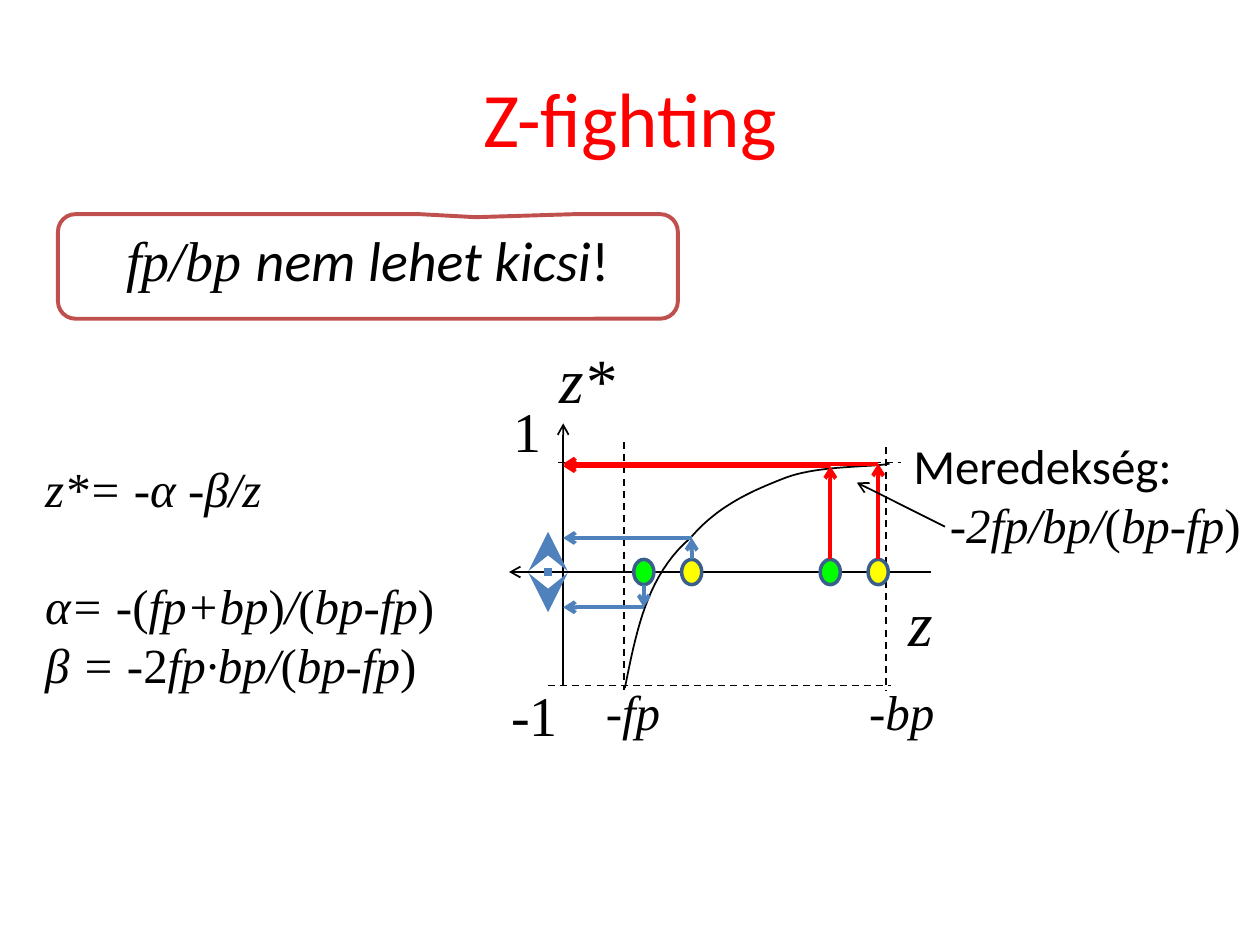
from dataclasses import dataclass

from lxml.etree import SubElement
from pptx import Presentation
from pptx.dml.color import RGBColor
from pptx.enum.dml import MSO_LINE
from pptx.enum.shapes import MSO_CONNECTOR, MSO_SHAPE
from pptx.enum.text import MSO_ANCHOR, MSO_AUTO_SIZE, PP_ALIGN
from pptx.oxml.ns import qn
from pptx.util import Inches, Pt


@dataclass(frozen=True)
class Theme:
    black: str = "000000"
    red: str = "FF0000"
    blue: str = "4F81BD"
    edge: str = "3A5F8C"
    brick: str = "C0504D"
    green: str = "00FF00"
    yellow: str = "FFFF00"
    sans: str = "Calibri"
    serif: str = "Times New Roman"
    title: int = 44
    axis: int = 36
    large: int = 32
    body: int = 28
    thin: float = 1
    bold: float = 2.25


THEME = Theme()


def color(code):
    return RGBColor.from_string(code)


def style(run, size, font, italic, tint=THEME.black):
    run.font.size = Pt(size)
    run.font.name = font
    run.font.italic = italic
    run.font.color.rgb = color(tint)


def fill_runs(para, text, size, italic=True):
    """Write serif text in which each | switches italics on or off."""
    for part in text.split("|"):
        run = para.add_run()
        run.text = part
        style(run, size, THEME.serif, italic)
        italic = not italic


def add_box(slide, left, top, width, height, wrap=False):
    box = slide.shapes.add_textbox(
        Inches(left), Inches(top), Inches(width), Inches(height))
    box.text_frame.word_wrap = wrap
    return box.text_frame


def add_label(slide, spot, text, size, italic=True):
    frame = add_box(slide, *spot)
    frame.auto_size = MSO_AUTO_SIZE.SHAPE_TO_FIT_TEXT
    fill_runs(frame.paragraphs[0], text, size, italic)


def add_line(slide, start, end, tint=THEME.black, width=THEME.thin,
             dash=False, head=None, tail=None, tip="med"):
    x1, y1 = map(Inches, start)
    x2, y2 = map(Inches, end)
    line = slide.shapes.add_connector(MSO_CONNECTOR.STRAIGHT, x1, y1, x2, y2)
    line.line.color.rgb = color(tint)
    line.line.width = Pt(width)
    if dash:
        line.line.dash_style = MSO_LINE.DASH
    stroke = line.line._get_or_add_ln()
    for tag, kind in (("a:headEnd", head), ("a:tailEnd", tail)):
        if kind:
            SubElement(stroke, qn(tag), type=kind, w=tip, len=tip)
    SubElement(line._element.spPr, qn("a:effectLst"))


def add_dot(slide, x, tint):
    dot = slide.shapes.add_shape(
        MSO_SHAPE.OVAL, Inches(x - 0.08), Inches(4.44), Inches(0.16), Inches(0.2))
    dot.shadow.inherit = False
    dot.fill.solid()
    dot.fill.fore_color.rgb = color(tint)
    dot.line.color.rgb = color(THEME.edge)
    dot.line.width = Pt(2)


def bezier(a, b, c, d, t):
    s = 1 - t
    return tuple(
        Inches(s**3 * p + 3 * s * s * t * q + 3 * s * t * t * r + t**3 * u)
        for p, q, r, u in zip(a, b, c, d))


def add_curve(slide, knots, steps=20):
    points = [bezier(*knots[i:i + 4], n / steps)
              for i in range(0, len(knots) - 1, 3)
              for n in range(steps + 1)]
    path = slide.shapes.build_freeform(*points[0])
    path.add_line_segments(points[1:], close=False)
    curve = path.convert_to_shape()
    curve.shadow.inherit = False
    curve.fill.background()
    curve.line.color.rgb = color(THEME.black)
    curve.line.width = Pt(THEME.thin)


def add_title(slide):
    frame = add_box(slide, 0.5, 0.3, 9, 1.25, wrap=True)
    frame.vertical_anchor = MSO_ANCHOR.MIDDLE
    frame.text = "Z-fighting"
    para = frame.paragraphs[0]
    para.alignment = PP_ALIGN.CENTER
    style(para.runs[0], THEME.title, THEME.sans, False, THEME.red)


def add_callout(slide):
    note = slide.shapes.add_shape(
        MSO_SHAPE.ROUNDED_RECTANGULAR_CALLOUT,
        Inches(0.46), Inches(1.7), Inches(4.92), Inches(0.83))
    for i, value in enumerate((0.174, -0.471, 0.167)):
        note.adjustments[i] = value
    note.shadow.inherit = False
    note.fill.background()
    note.line.color.rgb = color(THEME.brick)
    note.line.width = Pt(THEME.bold)
    frame = note.text_frame
    frame.vertical_anchor = MSO_ANCHOR.TOP
    para = frame.paragraphs[0]
    para.alignment = PP_ALIGN.CENTER
    for text, font, italic in (("fp/bp ", THEME.serif, True),
                               ("nem lehet kicsi", THEME.sans, True),
                               ("!", THEME.sans, False)):
        run = para.add_run()
        run.text = text
        style(run, THEME.large, font, italic)


def add_maths(slide):
    frame = add_box(slide, 0.26, 3.12, 3.43, 2.43, wrap=True)
    frame.vertical_anchor = MSO_ANCHOR.BOTTOM
    rows = ("z*= -α -β/z",
            "α= -|(|fp+bp|)|/|(|bp-fp|)",
            "β = -|2|fp·bp/|(|bp-fp|)")
    for i, row in enumerate(rows):
        para = frame.add_paragraph() if i else frame.paragraphs[0]
        fill_runs(para, row, THEME.body)
    frame.paragraphs[1].space_before = Pt(33)


def add_slope(slide):
    frame = add_box(slide, 7.15, 3.41, 2.93, 1.04)
    frame.text = "Meredekség:"
    style(frame.paragraphs[0].runs[0], THEME.body, THEME.sans, False)
    para = frame.add_paragraph()
    para._p.get_or_add_pPr().set("marL", str(Inches(0.29)))
    fill_runs(para, "-2fp/bp/|(|bp-fp|)", THEME.body)
    add_line(slide, (7.5, 4.18), (6.8, 3.83), tail="arrow")


def add_plot(slide):
    # Axes, limits and curve
    for start, end in (((4.47, 5.44), (4.47, 3.36)), ((7.39, 4.54), (4.04, 4.54))):
        add_line(slide, start, end, tail="arrow")
    for start, end in (((4.95, 3.51), (4.95, 5.48)), ((7.03, 3.55), (7.03, 5.48)),
                       ((4.43, 3.67), (7.15, 3.67)), ((4.35, 5.44), (7.07, 5.44))):
        add_line(slide, start, end, dash=True)
    add_curve(slide, [(4.96, 5.46), (5.05, 5.02), (5.13, 4.57), (5.48, 4.27),
                      (5.7, 4.01), (5.98, 3.89), (6.24, 3.79),
                      (6.51, 3.69), (6.93, 3.71), (7.06, 3.68)])

    # Labels
    for spot, text, size, italic in (
            ((7.11, 4.58, 0.4, 0.71), "z", THEME.axis, True),
            ((4.34, 2.65, 0.65, 0.71), "z*", THEME.axis, True),
            ((3.98, 3.1, 0.43, 0.64), "1", THEME.large, False),
            ((3.96, 5.35, 0.58, 0.64), "-1", THEME.large, False),
            ((4.71, 5.36, 0.64, 0.57), "-fp", THEME.body, True),
            ((6.8, 5.36, 0.73, 0.57), "-bp", THEME.body, True)):
        add_label(slide, spot, text, size, italic)

    # Depths on the z axis, each mapped to the curve and then to z*
    for x, base, level, dot, tint in (
            (5.11, 4.64, 4.82, THEME.green, THEME.blue),
            (5.49, 4.44, 4.27, THEME.yellow, THEME.blue),
            (6.59, 4.44, 3.7, THEME.green, THEME.red),
            (6.97, 4.44, 3.68, THEME.yellow, THEME.red)):
        add_dot(slide, x, dot)
        for start, end in (((x, base), (x, level)), ((x, level), (4.47, level))):
            add_line(slide, start, end, tint, THEME.bold, tail="arrow")
    add_line(slide, (4.35, 4.86), (4.35, 4.22), THEME.blue, 4.5,
             head="stealth", tail="stealth", tip="lg")


def main():
    deck = Presentation()
    deck.slide_width, deck.slide_height = Inches(10), Inches(7.5)
    slide = deck.slides.add_slide(deck.slide_layouts[6])
    add_title(slide)
    add_callout(slide)
    add_maths(slide)
    add_plot(slide)
    add_slope(slide)
    deck.save("out.pptx")


if __name__ == "__main__":
    main()
